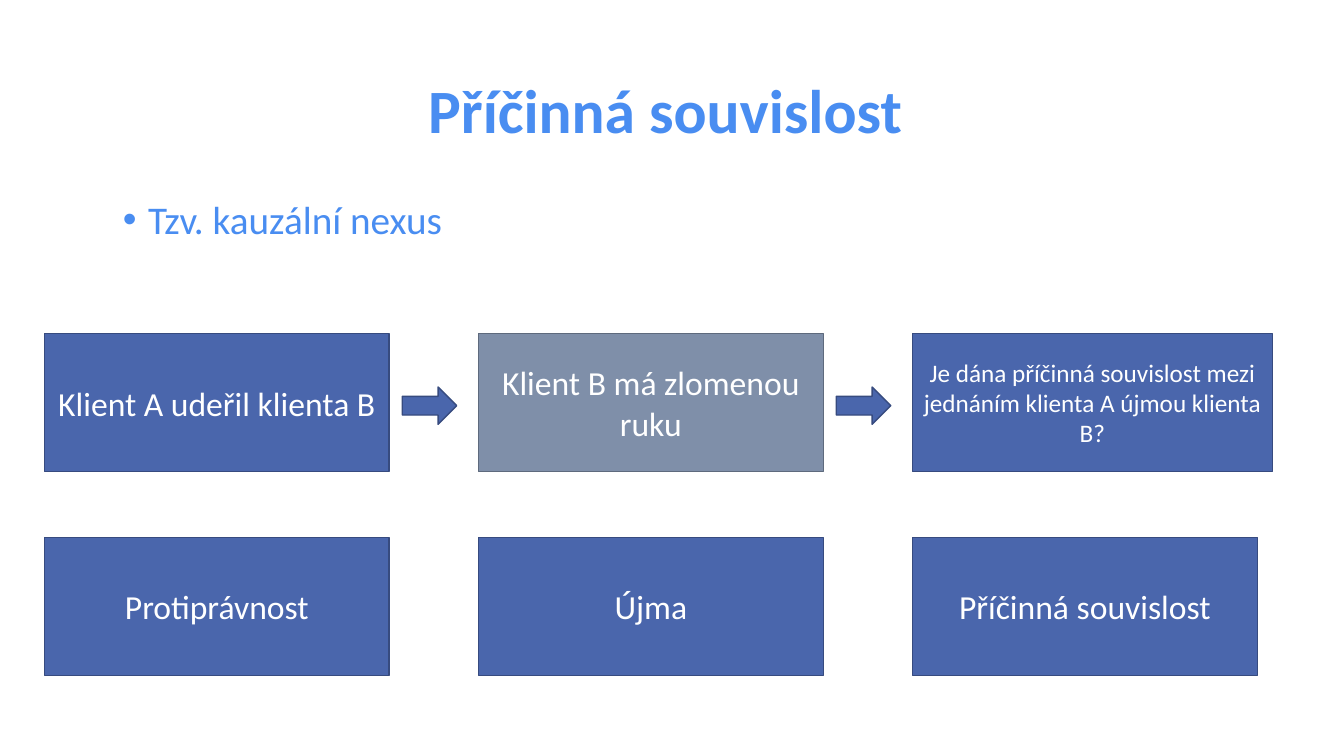
from lxml.etree import SubElement
from pptx import Presentation
from pptx.dml.color import RGBColor
from pptx.enum.shapes import MSO_SHAPE
from pptx.enum.text import MSO_ANCHOR, PP_ALIGN
from pptx.oxml.ns import qn
from pptx.util import Inches, Pt

SKY = RGBColor(0x49, 0x8D, 0xF1)
BLUE = RGBColor(0x4A, 0x66, 0xAC)
NAVY = RGBColor(0x37, 0x4B, 0x7F)
GRAY = RGBColor(0x7F, 0x8F, 0xA9)
SLATE = RGBColor(0x5E, 0x6A, 0x7D)
WHITE = RGBColor(0xFF, 0xFF, 0xFF)

# Text, font size, extra width, fill, line
FACTS = [
    ("Klient A udeřil klienta B", 24, 0, BLUE, NAVY),
    ("Klient B má zlomenou ruku", 24, 0, GRAY, SLATE),
    ("Je dána příčinná souvislost mezi jednáním klienta A újmou klienta B?",
     18, 0.15, BLUE, NAVY),
]
TERMS = [(text, 24, 0, BLUE, NAVY)
         for text in ("Protiprávnost", "Újma", "Příčinná souvislost")]
BOX_W, BOX_H = 3.42, 1.37
ARROW_W, ARROW_H = 0.54, 0.37


def apply(item, form):
    for name, value in form.items():
        setattr(item, name, value)


def write(shape, text, color, font, para, anchor=MSO_ANCHOR.MIDDLE):
    """Fill the shape with one formatted paragraph and return it."""
    frame = shape.text_frame
    apply(frame, {"word_wrap": True, "vertical_anchor": anchor})
    line = frame.paragraphs[0]
    apply(line, para)
    run = line.add_run()
    run.text = text
    apply(run.font, {"name": "Calibri", **font})
    run.font.color.rgb = color
    return line


def add_text(slide, box, *style):
    shape = slide.shapes.add_textbox(*map(Inches, box))
    return write(shape, *style)


def add_title(slide, box):
    add_text(slide, box, "Příčinná souvislost ", SKY,
             {"size": Pt(44), "bold": True},
             {"alignment": PP_ALIGN.CENTER, "line_spacing": 0.9})


def add_point(slide, box):
    line = add_text(slide, box, "Tzv. kauzální nexus", SKY, {"size": Pt(28)},
                    {"line_spacing": 0.9, "space_before": Pt(10)},
                    MSO_ANCHOR.TOP)
    props = line._p.get_or_add_pPr()
    props.set("marL", str(Inches(0.25)))
    props.set("indent", str(-Inches(0.25)))
    SubElement(props, qn("a:buFont")).set("typeface", "Arial")
    SubElement(props, qn("a:buChar")).set("char", "•")


def add_block(slide, kind, box, fill, edge):
    shape = slide.shapes.add_shape(kind, *map(Inches, box))
    shape.shadow.inherit = False
    shape.fill.solid()
    shape.fill.fore_color.rgb = fill
    shape.line.color.rgb = edge
    shape.line.width = Pt(1)
    return shape


def add_row(slide, box, items, arrows=False):
    """Spread the items over the box, with arrows between them if asked."""
    left, top, width, height = box
    step = (width - BOX_W) / (len(items) - 1)
    for i, (text, size, extra, fill, edge) in enumerate(items):
        x = left + i * step
        shape = add_block(slide, MSO_SHAPE.RECTANGLE,
                          (x, top, BOX_W + extra, height), fill, edge)
        write(shape, text, WHITE, {"size": Pt(size)},
              {"alignment": PP_ALIGN.CENTER})
        if arrows and i < len(items) - 1:
            spot = (x + BOX_W + 0.13, top + (height - ARROW_H) / 2 + 0.03,
                    ARROW_W, ARROW_H)
            add_block(slide, MSO_SHAPE.RIGHT_ARROW, spot, BLUE, NAVY)


def main():
    deck = Presentation()
    apply(deck, {"slide_width": Inches(13.33), "slide_height": Inches(7.5)})
    slide = deck.slides.add_slide(deck.slide_layouts[6])
    add_title(slide, (0.92, 0.4, 11.5, 1.45))
    add_point(slide, (1.12, 1.94, 11.5, 4.76))
    add_row(slide, (0.44, 3.31, 12.03, BOX_H), FACTS, arrows=True)
    add_row(slide, (0.44, 5.33, 12.03, BOX_H), TERMS)
    deck.save("out.pptx")


if __name__ == "__main__":
    main()
